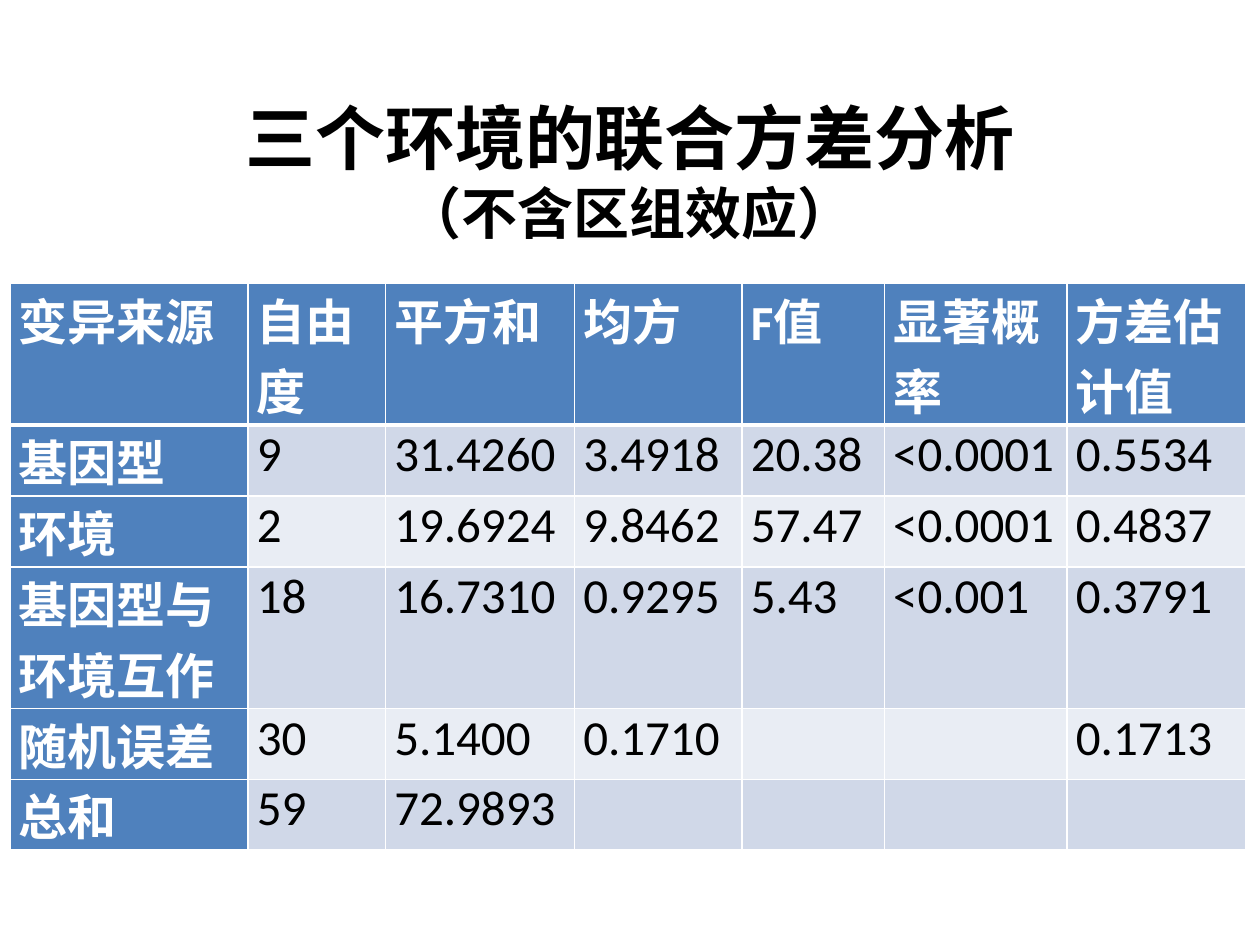
"""Build a slide with a joint variance analysis table for three environments."""
from dataclasses import dataclass
from typing import NamedTuple

from lxml import etree
from pptx import Presentation
from pptx.dml.color import RGBColor
from pptx.enum.text import MSO_ANCHOR, PP_ALIGN
from pptx.oxml.ns import qn
from pptx.util import Inches, Pt

CENTER = PP_ALIGN.CENTER
MIDDLE = MSO_ANCHOR.MIDDLE
LAYOUT_TITLE_ONLY = 5
SLIDE_WIDTH, SLIDE_HEIGHT = Inches(10), Inches(7.5)


@dataclass(frozen=True)
class Theme:
    title_font: str = "Times New Roman"
    table_font: str = "Calibri"
    title_size: int = 40
    subtitle_size: int = 32
    table_size: int = 28
    dark: str = "000000"
    light: str = "FFFFFF"
    heading: str = "4F81BD"
    bands: tuple[str, str] = ("D0D8E8", "E9EDF4")
    thin_line: int = 1
    thick_line: int = 3


class Box(NamedTuple):
    left: float
    top: float
    width: float
    height: float

    def lengths(self) -> tuple[int, int, int, int]:
        return (int(self.left * SLIDE_WIDTH), int(self.top * SLIDE_HEIGHT),
                int(self.width * SLIDE_WIDTH), int(self.height * SLIDE_HEIGHT))


class TableRow(NamedTuple):
    lines: int
    values: tuple[str, ...]


THEME = Theme()
TITLE_BOX = Box(0.05, 0.08, 0.9, 0.2)
TABLE_BOX = Box(0.008, 0.3, 0.98, 0.6)
LINE_HEIGHT = Inches(0.56)
CELL_MARGIN = Inches(0.07)
COLUMN_WIDTHS = (1.89, 1.09, 1.5, 1.33, 1.13, 1.45, 1.42)
ROWS = (
    TableRow(2, ("变异来源", "自由度", "平方和", "均方", "F值", "显著概率", "方差估计值")),
    TableRow(1, ("基因型", "9", "31.4260", "3.4918", "20.38", "<0.0001", "0.5534")),
    TableRow(1, ("环境", "2", "19.6924", "9.8462", "57.47", "<0.0001", "0.4837")),
    TableRow(2, ("基因型与环境互作", "18", "16.7310", "0.9295", "5.43", "<0.001", "0.3791")),
    TableRow(1, ("随机误差", "30", "5.1400", "0.1710", "", "", "0.1713")),
    TableRow(1, ("总和", "59", "72.9893", "", "", "", "")),
)


def add_run(paragraph, text: str, font: str, size: int, color: str, bold: bool) -> None:
    run = paragraph.add_run()
    run.text = text
    run.font.name = font
    run.font.size = Pt(size)
    run.font.bold = bold
    run.font.color.rgb = RGBColor.from_string(color)


def draw_title(slide) -> None:
    title = slide.shapes.title
    title.left, title.top, title.width, title.height = TITLE_BOX.lengths()
    title.text_frame.vertical_anchor = MIDDLE
    paragraph = title.text_frame.paragraphs[0]
    paragraph.alignment = CENTER
    add_run(paragraph, "三个环境的联合方差分析", THEME.title_font, THEME.title_size, THEME.dark, True)
    paragraph.add_line_break()
    add_run(paragraph, "（不含区组效应）", THEME.title_font, THEME.subtitle_size, THEME.dark, True)


def set_borders(cell, top: int, bottom: int) -> None:
    properties = cell._tc.get_or_add_tcPr()
    widths = {"lnL": THEME.thin_line, "lnR": THEME.thin_line, "lnT": top, "lnB": bottom}
    for position, (side, width) in enumerate(widths.items()):
        line = etree.Element(qn(f"a:{side}"), w=str(Pt(width)))
        fill = etree.SubElement(line, qn("a:solidFill"))
        etree.SubElement(fill, qn("a:srgbClr"), val=THEME.light)
        properties.insert(position, line)


def draw_cell(cell, text: str, row: int, column: int) -> None:
    is_heading = row == 0 or column == 0
    color = THEME.heading if is_heading else THEME.bands[(row - 1) % 2]
    cell.fill.solid()
    cell.fill.fore_color.rgb = RGBColor.from_string(color)
    cell.margin_left = cell.margin_right = CELL_MARGIN
    cell.margin_top = cell.margin_bottom = 0
    set_borders(cell,
                THEME.thick_line if row == 1 else THEME.thin_line,
                THEME.thick_line if row == 0 else THEME.thin_line)
    paragraph = cell.text_frame.paragraphs[0]
    if text:
        add_run(paragraph, text, THEME.table_font, THEME.table_size,
                THEME.light if is_heading else THEME.dark, is_heading)
    else:
        paragraph.font.size = Pt(THEME.table_size)


def draw_table(slide) -> None:
    table = slide.shapes.add_table(len(ROWS), len(COLUMN_WIDTHS), *TABLE_BOX.lengths()).table
    table.first_col = True
    for column, width in zip(table.columns, COLUMN_WIDTHS):
        column.width = Inches(width)
    for row_index, row in enumerate(ROWS):
        table.rows[row_index].height = row.lines * LINE_HEIGHT
        for column_index, text in enumerate(row.values):
            draw_cell(table.cell(row_index, column_index), text, row_index, column_index)


def main() -> None:
    presentation = Presentation()
    presentation.slide_width, presentation.slide_height = SLIDE_WIDTH, SLIDE_HEIGHT
    slide = presentation.slides.add_slide(presentation.slide_layouts[LAYOUT_TITLE_ONLY])
    draw_title(slide)
    draw_table(slide)
    presentation.save("out.pptx")


if __name__ == "__main__":
    main()
